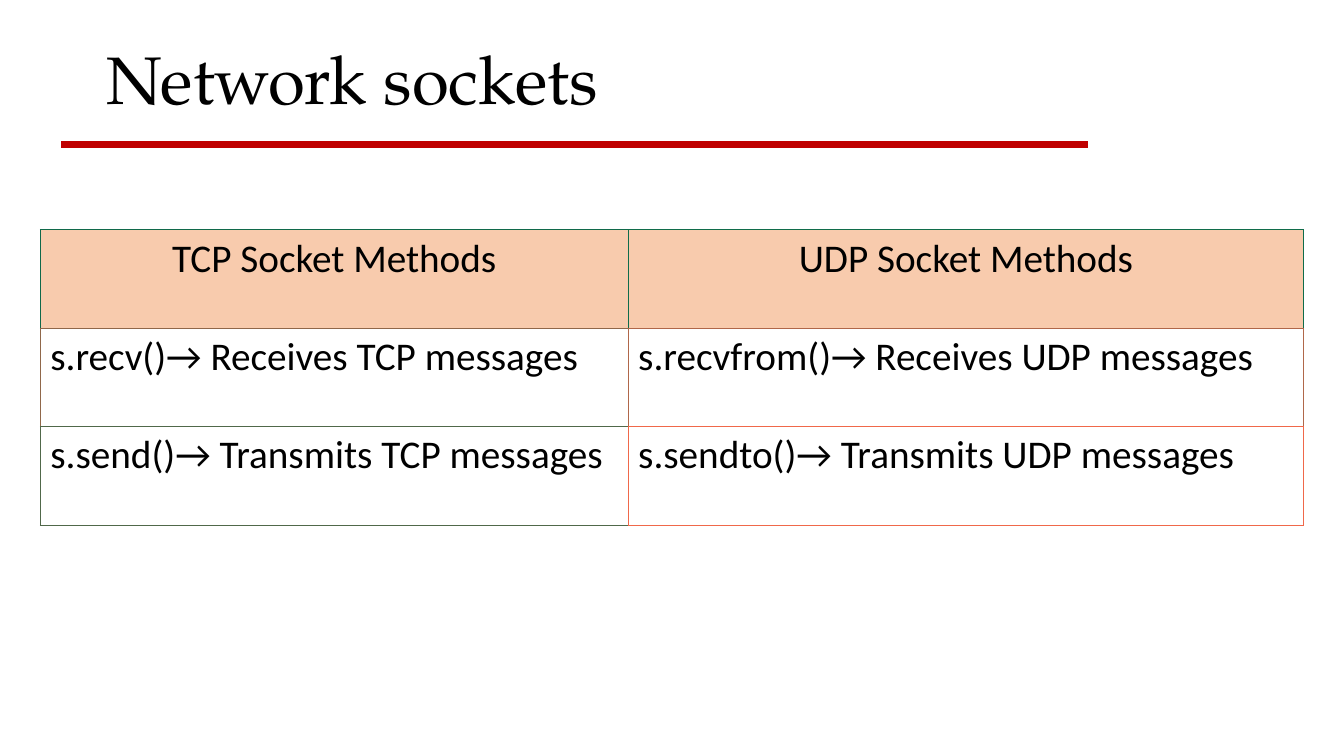
"""Build the slide comparing TCP and UDP network socket methods."""
import dataclasses

import lxml.etree
import pptx
import pptx.dml.color
import pptx.enum.shapes
import pptx.enum.text
import pptx.oxml.ns
import pptx.presentation
import pptx.slide
import pptx.table
import pptx.text.text
import pptx.util


@dataclasses.dataclass(frozen=True)
class Theme:
    title_font: str = "TeX Gyre Pagella"
    body_font: str = "Calibri"
    title_size: int = 48
    body_size: int = 28
    ink: str = "000000"
    paper: str = "FFFFFF"
    heading: str = "F8CBAD"
    accent: str = "C00000"
    accent_width: float = 5
    border_width: float = 0.75


@dataclasses.dataclass(frozen=True)
class Area:
    left: float
    top: float
    width: float
    height: float = 0


@dataclasses.dataclass(frozen=True)
class Method:
    text: str
    left: str
    right: str
    top: str
    bottom: str


THEME = Theme()
WIDTH = pptx.util.Inches(13.33)
HEIGHT = pptx.util.Inches(7.5)
TITLE = Area(0.96 / 13.33, 0.41 / 7.5, 6.67 / 13.33, 0.83 / 7.5)
RULE = Area(0.61 / 13.33, 1.43 / 7.5, 10.18 / 13.33)
METHODS = Area(0.4 / 13.33, 2.28 / 7.5, 12.53 / 13.33, 2.93 / 7.5)
COLUMN_SHARES = (5.83 / 12.53, 6.7 / 12.53)
ROWS = (
    (
        Method("TCP Socket Methods", "10694A", "106C4A", "10694A", "90674A"),
        Method("UDP Socket Methods", "106C4A", "106C4A", "106C4A", "B0674A"),
    ),
    (
        Method("s.recv()→ Receives TCP messages", "90674A", "B0674A", "90674A", "50684A"),
        Method("s.recvfrom()→ Receives UDP messages", "B0674A", "B0674A", "B0674A", "F0684A"),
    ),
    (
        Method("s.send()→ Transmits TCP messages", "50684A", "F0684A", "50684A", "50684A"),
        Method("s.sendto()→ Transmits UDP messages", "F0684A", "F0684A", "F0684A", "F0684A"),
    ),
)


def rgb(value: str) -> pptx.dml.color.RGBColor:
    return pptx.dml.color.RGBColor.from_string(value)


def across(share: float) -> pptx.util.Emu:
    return pptx.util.Emu(round(WIDTH * share))


def down(share: float) -> pptx.util.Emu:
    return pptx.util.Emu(round(HEIGHT * share))


def placed(area: Area) -> tuple[int, int, int, int]:
    return across(area.left), down(area.top), across(area.width), down(area.height)


def set_font(paragraph: pptx.text.text._Paragraph, name: str, size: int) -> None:
    paragraph.font.name = name
    paragraph.font.size = pptx.util.Pt(size)
    paragraph.font.color.rgb = rgb(THEME.ink)


def draw_title(slide: pptx.slide.Slide, text: str) -> None:
    frame = slide.shapes.add_textbox(*placed(TITLE)).text_frame
    frame.word_wrap = True
    heading = frame.paragraphs[0]
    heading.text = text
    heading.line_spacing = 0.9
    set_font(heading, THEME.title_font, THEME.title_size)


def draw_rule(slide: pptx.slide.Slide) -> None:
    left, top, width, _ = placed(RULE)
    rule = slide.shapes.add_connector(
        pptx.enum.shapes.MSO_CONNECTOR.STRAIGHT, left, top, left + width, top
    )
    rule.line.color.rgb = rgb(THEME.accent)
    rule.line.width = pptx.util.Pt(THEME.accent_width)
    lxml.etree.SubElement(rule._element.spPr, pptx.oxml.ns.qn("a:effectLst"))


def draw_borders(cell: pptx.table._Cell, method: Method) -> None:
    qn = pptx.oxml.ns.qn
    properties = cell._tc.get_or_add_tcPr()
    sides = {"L": method.left, "R": method.right, "T": method.top, "B": method.bottom}
    for position, (side, color) in enumerate(sides.items()):
        border = lxml.etree.Element(
            qn(f"a:ln{side}"), w=str(pptx.util.Pt(THEME.border_width))
        )
        fill = lxml.etree.SubElement(border, qn("a:solidFill"))
        lxml.etree.SubElement(fill, qn("a:srgbClr"), val=color)
        properties.insert(position, border)


def draw_method(cell: pptx.table._Cell, method: Method, is_heading: bool) -> None:
    cell.fill.solid()
    cell.fill.fore_color.rgb = rgb(THEME.heading if is_heading else THEME.paper)
    draw_borders(cell, method)
    label = cell.text_frame.paragraphs[0]
    label.text = method.text
    align = pptx.enum.text.PP_ALIGN
    label.alignment = align.CENTER if is_heading else align.LEFT
    set_font(label, THEME.body_font, THEME.body_size)


def draw_methods(slide: pptx.slide.Slide) -> None:
    methods = slide.shapes.add_table(
        len(ROWS), len(COLUMN_SHARES), *placed(METHODS)
    ).table
    methods.first_row = False
    methods.horz_banding = False
    for column, share in zip(methods.columns, COLUMN_SHARES):
        column.width = across(METHODS.width * share)
    for row_index, row in enumerate(ROWS):
        for column_index, method in enumerate(row):
            draw_method(methods.cell(row_index, column_index), method, row_index == 0)


def main() -> None:
    deck = pptx.Presentation()
    deck.slide_width = WIDTH
    deck.slide_height = HEIGHT
    slide = deck.slides.add_slide(deck.slide_layouts[6])
    slide.background.fill.solid()
    slide.background.fill.fore_color.rgb = rgb(THEME.paper)
    draw_title(slide, "Network sockets")
    draw_rule(slide)
    draw_methods(slide)
    deck.save("out.pptx")


if __name__ == "__main__":
    main()
